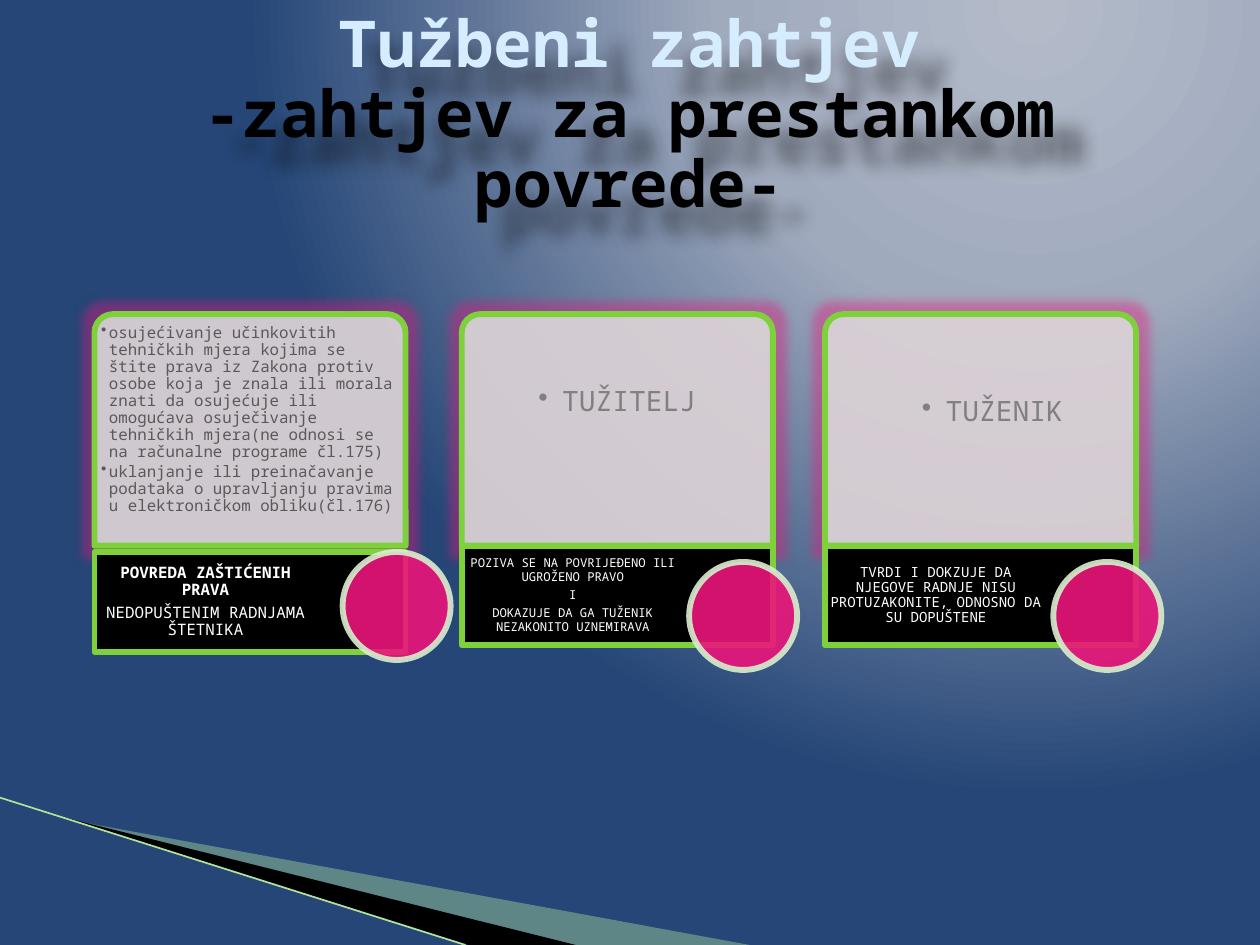
from lxml import etree
from pptx import Presentation
from pptx.dml.color import RGBColor
from pptx.enum.shapes import MSO_CONNECTOR, MSO_SHAPE
from pptx.enum.text import MSO_ANCHOR, MSO_AUTO_SIZE, PP_ALIGN
from pptx.oxml.ns import qn
from pptx.util import Pt

ROUND_TOP, RECT, OVAL = MSO_SHAPE.ROUND_2_SAME_RECTANGLE, MSO_SHAPE.RECTANGLE, MSO_SHAPE.OVAL
TOP, MIDDLE = MSO_ANCHOR.TOP, MSO_ANCHOR.MIDDLE
LEFT, CENTER = PP_ALIGN.LEFT, PP_ALIGN.CENTER
FONT = "Noto Sans Mono"

BLACK = RGBColor(0x00, 0x00, 0x00)
WHITE = RGBColor(0xFF, 0xFF, 0xFF)
ICE = RGBColor(0xD6, 0xEC, 0xFF)
PANEL = RGBColor(0xD9, 0xD9, 0xD9)
GREEN = RGBColor(0x7F, 0xD1, 0x3B)
MINT = RGBColor(0xB8, 0xE7, 0xA1)
LIME = RGBColor(0xB1, 0xE3, 0x99)
PALE = RGBColor(0xD8, 0xEE, 0xCE)
PINK = RGBColor(0xEA, 0x15, 0x7A)
DARK_GREY = RGBColor(0x59, 0x59, 0x59)
GREY = RGBColor(0x80, 0x80, 0x80)

# Content
TITLE = [("Tužbeni zahtjev", ICE), ("-zahtjev za prestankom povrede-", BLACK)]
CARDS = [
    dict(left=54, label_top=315.4, circle=(195.8, 315.4),
         points=["osujećivanje učinkovitih tehničkih mjera kojima se štite prava iz Zakona "
                 "protiv osobe koja je znala ili morala znati da osujećuje ili omogućava "
                 "osuječivanje tehničkih mjera(ne odnosi se na računalne programe čl.175)",
                 "uklanjanje ili preinačavanje podataka o upravljanju pravima u "
                 "elektroničkom obliku(čl.176)"],
         size=9, color=DARK_GREY, align=LEFT, margin=4.5, hang=4.5, inset=(0.7, 2.9),
         label=["POVREDA ZAŠTIĆENIH PRAVA", "NEDOPUŠTENIM RADNJAMA ŠTETNIKA"],
         label_size=9, bold_first=True),
    dict(left=263.9, label_top=311.8, circle=(393.8, 321.1),
         points=["TUŽITELJ"],
         size=16, color=GREY, align=CENTER, margin=13.5, hang=13.5, inset=(1.4, 39),
         label=["POZIVA SE NA POVRIJEĐENO ILI UGROŽENO PRAVO", "I",
                "DOKAZUJE DA GA TUŽENIK NEZAKONITO UZNEMIRAVA"],
         label_size=7, bold_first=False),
    dict(left=471.5, label_top=311.8, circle=(601.9, 321.1),
         points=["TUŽENIK"],
         size=16, color=GREY, align=CENTER, margin=27, hang=13.5, inset=(1.4, 44.5),
         label=["TVRDI I DOKZUJE DA NJEGOVE RADNJE NISU PROTUZAKONITE, ODNOSNO DA SU DOPUŠTENE"],
         label_size=8, bold_first=False),
]
STRIPES = [
    ([(39.6, 468.5), (428.4, 540), (328.3, 540)], MINT, 40),
    ([(38.2, 467.5), (329, 540), (267.8, 540)], BLACK, 100),
]
BG_STOPS = [(0, "B3BBC9"), (40, "A0AABD"), (100, "254677")]

CARD_TOP, CARD_W, CARD_H = 179.5, 177.8, 132.3
LABEL_H, LABEL_TEXT_W, CIRCLE_D = 57, 125.3, 61.7


def child(parent, tag, **attrs):
    return etree.SubElement(parent, qn(tag), {k: str(v) for k, v in attrs.items()})


def set_alpha(fill_parent, percent):
    color = fill_parent.find(qn("a:solidFill"))[0]
    child(color, "a:alpha", val=percent * 1000)


def add_effect(s, tag, color, percent, **attrs):
    s.shadow.inherit = False
    effect = child(s._element.spPr.find(qn("a:effectLst")), tag, **attrs)
    child(child(effect, "a:srgbClr", val=color), "a:alpha", val=percent * 1000)


def style(s, fill, line=None, alpha=100, line_alpha=100):
    s.shadow.inherit = False
    s.fill.solid()
    s.fill.fore_color.rgb = fill
    if alpha < 100:
        set_alpha(s._element.spPr, alpha)
    if line is None:
        s.line.fill.background()
        return
    s.line.color.rgb = line
    s.line.width = Pt(3.35)
    if line_alpha < 100:
        set_alpha(s._element.spPr.find(qn("a:ln")), line_alpha)


def add_box(kind, left, top, width, height):
    return slide.shapes.add_shape(kind, Pt(left), Pt(top), Pt(width), Pt(height))


def write(s, texts, size, color, align, anchor, insets, gap, bullet=None):
    tf = s.text_frame
    tf.word_wrap = True
    tf.vertical_anchor = anchor
    tf.margin_left, tf.margin_top, tf.margin_right, tf.margin_bottom = map(Pt, insets)
    for i, text in enumerate(texts):
        p = tf.paragraphs[0] if i == 0 else tf.add_paragraph()
        p.text = text
        p.alignment = align
        p.line_spacing = 0.9
        p.space_after = Pt(gap)
        if bullet:
            margin, hang = bullet
            pPr = p._p.get_or_add_pPr()
            pPr.set("marL", str(Pt(margin)))
            pPr.set("indent", str(-Pt(hang)))
            child(pPr, "a:buChar", char="•")
        p.font.size = Pt(size)
        p.font.name = FONT
        p.font.color.rgb = color
    return tf


prs = Presentation()
prs.slide_width, prs.slide_height = Pt(720), Pt(540)
slide = prs.slides.add_slide(prs.slide_layouts[5])

# Background: circular gradient centred near the top right
slide.background.fill.gradient()
grad = next(slide._element.iter(qn("a:gradFill")))
for old in list(grad):
    grad.remove(old)
stops = child(grad, "a:gsLst")
for pos, color in BG_STOPS:
    child(child(stops, "a:gs", pos=pos * 1000), "a:srgbClr", val=color)
child(child(grad, "a:path", path="circle"), "a:fillToRect", l=65000, t=0, r=0, b=98000)

# Stripes in the bottom left corner
for points, color, alpha in STRIPES:
    start, *rest = [(Pt(x), Pt(y)) for x, y in points]
    builder = slide.shapes.build_freeform(*start)
    builder.add_line_segments(rest, close=True)
    style(builder.convert_to_shape(), color, alpha=alpha)
edge = slide.shapes.add_connector(MSO_CONNECTOR.STRAIGHT, Pt(0), Pt(455.8), Pt(266), Pt(540))
edge.line.color.rgb = LIME
edge.line.width = Pt(0.95)
child(edge._element.spPr, "a:effectLst")

# Title with a soft shadow
title = slide.shapes.title
title.left, title.top, title.width, title.height = Pt(36), Pt(21.6), Pt(648), Pt(90)
title.fill.background()
add_effect(title, "a:outerShdw", "000000", 45, blurRad=Pt(10), dist=Pt(21), dir=2700000, algn="tl")
tf = title.text_frame
tf.word_wrap = True
tf.auto_size = MSO_AUTO_SIZE.NONE
tf.vertical_anchor = MIDDLE
p = tf.paragraphs[0]
p.alignment = CENTER
p.line_spacing = 0.9
p.font.size = Pt(36.9)
p.font.name = FONT
p.font.bold = True
for i, (text, color) in enumerate(TITLE):
    if i:
        p.add_line_break()
    r = p.add_run()
    r.text = text
    r.font.color.rgb = color

# Cards: panel, label and circle
for card in CARDS:
    panel = add_box(ROUND_TOP, card["left"], CARD_TOP, CARD_W, CARD_H)
    panel.adjustments[0], panel.adjustments[1] = 0.08, 0
    style(panel, PANEL, GREEN, alpha=90)
    add_effect(panel, "a:glow", PINK, 40, rad=Pt(11))
    side, top = card["inset"]
    write(panel, card["points"], card["size"], card["color"], card["align"], TOP,
          (side, top, side, 0.7), 1.5, (card["margin"], card["hang"]))

    label = add_box(RECT, card["left"], card["label_top"], CARD_W, LABEL_H)
    style(label, BLACK, GREEN)
    tf = write(label, card["label"], card["label_size"], WHITE, CENTER, MIDDLE,
               (2.2, 0, CARD_W - LABEL_TEXT_W + 0.7, 0), 3)
    if card["bold_first"]:
        tf.paragraphs[0].font.bold = True

    circle = add_box(OVAL, *card["circle"], CIRCLE_D, CIRCLE_D)
    style(circle, PINK, PALE, alpha=90, line_alpha=90)

prs.save("out.pptx")
